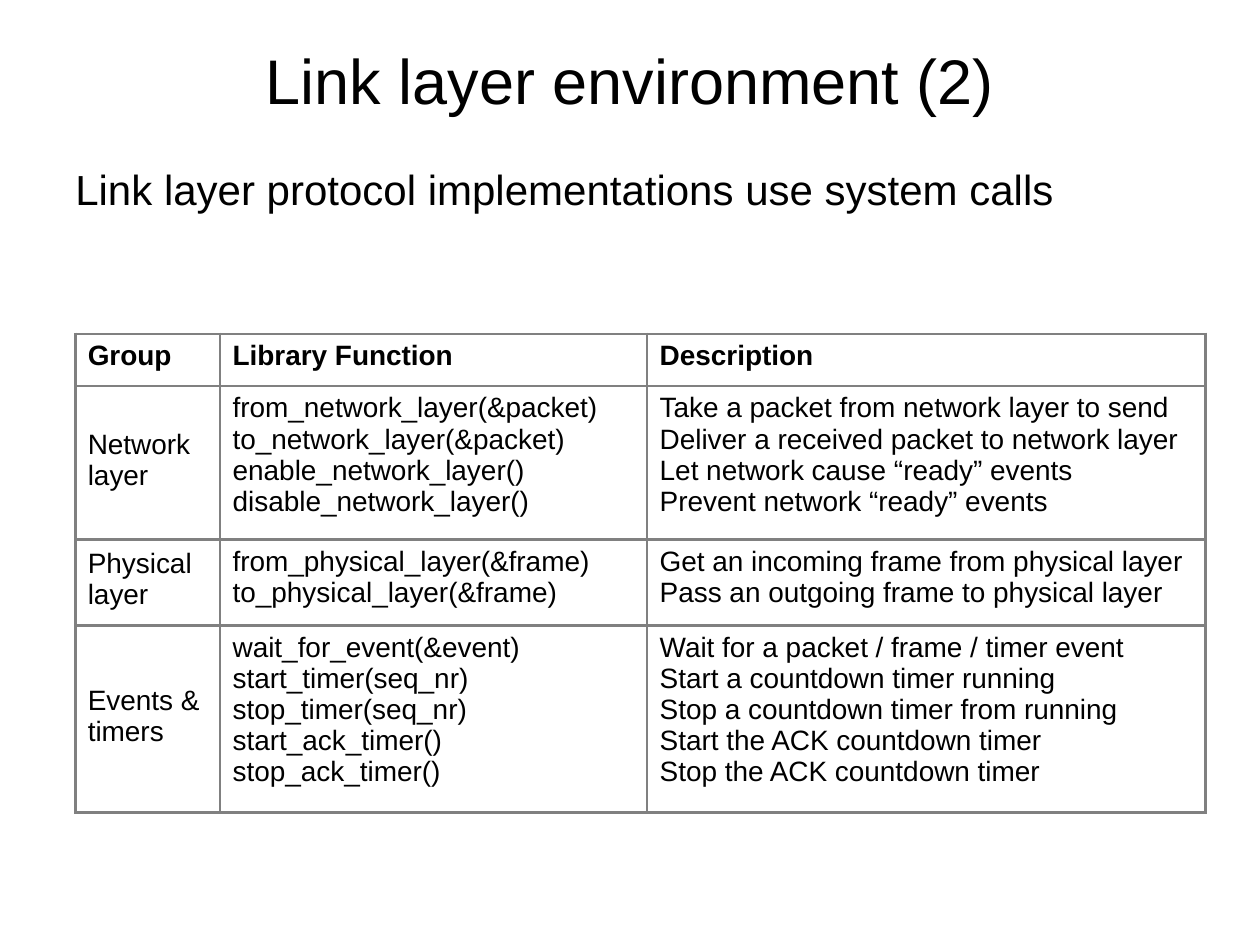
from collections import namedtuple

from lxml import etree
from pptx import Presentation
from pptx.dml.color import RGBColor
from pptx.enum.text import MSO_ANCHOR, PP_ALIGN
from pptx.oxml.ns import qn
from pptx.util import Cm, Pt

Box = namedtuple("Box", "left top width height")

BLACK = RGBColor(0x00, 0x00, 0x00)
GREY = RGBColor(0x80, 0x80, 0x80)
TOP, MIDDLE = MSO_ANCHOR.TOP, MSO_ANCHOR.MIDDLE
LEFT, CENTER = PP_ALIGN.LEFT, PP_ALIGN.CENTER

FONT = {"name": "Arial", "bold": False}
TITLE_FONT = {**FONT, "size": Pt(36)}
BODY_FONT = {**FONT, "size": Pt(24)}
CELL_FONT = {**FONT, "size": Pt(16)}
HEADER_FONT = {**CELL_FONT, "bold": True}
CELL_MARGINS = {
    "margin_left": Cm(0.25),
    "margin_top": Cm(0.13),
    "margin_right": Cm(0.25),
    "margin_bottom": Cm(0.25),
}

COLUMN_SHARES = (1.15, 3.39, 4.43)
ROW_HEIGHTS = (1.03, 2.9, 1.63, 3.53)
HEADERS = ("Group", "Library Function", "Description")
CALL_GROUPS = {
    "Network layer": (
        ("from_network_layer(&packet)", "Take a packet from network layer to send"),
        ("to_network_layer(&packet)", "Deliver a received packet to network layer"),
        ("enable_network_layer()", "Let network cause “ready” events"),
        ("disable_network_layer()", "Prevent network “ready” events"),
    ),
    "Physical layer": (
        ("from_physical_layer(&frame)", "Get an incoming frame from physical layer"),
        ("to_physical_layer(&frame)", "Pass an outgoing frame to physical layer"),
    ),
    "Events & timers": (
        ("wait_for_event(&event)", "Wait for a packet / frame / timer event"),
        ("start_timer(seq_nr)", "Start a countdown timer running"),
        ("stop_timer(seq_nr)", "Stop a countdown timer from running"),
        ("start_ack_timer()", "Start the ACK countdown timer"),
        ("stop_ack_timer()", "Stop the ACK countdown timer"),
    ),
}


def set_values(target, values):
    """Set each named attribute of the target."""
    for name, value in values.items():
        setattr(target, name, value)


def write_lines(frame, lines, font, align=LEFT):
    """Write one paragraph for each line."""
    for index, line in enumerate(lines):
        para = frame.paragraphs[0] if index == 0 else frame.add_paragraph()
        para.alignment = align
        span = para.add_run()
        span.text = line
        set_values(span.font, font)
        span.font.color.rgb = BLACK


def add_text(page, box, line, font, anchor=TOP, align=LEFT):
    """Place a line of text in the box."""
    frame = page.shapes.add_textbox(*map(Cm, box)).text_frame
    set_values(frame, {"word_wrap": True, "vertical_anchor": anchor})
    write_lines(frame, [line], font, align)


def add_borders(cell, color, width):
    """Draw the four edges of a cell."""
    properties = cell._tc.get_or_add_tcPr()
    for index, side in enumerate(("lnL", "lnR", "lnT", "lnB")):
        line = etree.Element(qn(f"a:{side}"), w=str(width))
        fill = etree.SubElement(line, qn("a:solidFill"))
        etree.SubElement(fill, qn("a:srgbClr"), val=str(color))
        properties.insert(index, line)


def fill_cell(cell, lines, font, anchor):
    """Style a cell and write its lines."""
    set_values(cell, {**CELL_MARGINS, "vertical_anchor": anchor})
    cell.fill.background()
    add_borders(cell, GREY, Pt(1.5))
    write_lines(cell.text_frame, lines, font)


def add_call_table(page, box):
    """Place the table of system calls in the box."""
    rows = [[[header] for header in HEADERS]]
    rows += [[[group], *zip(*calls)] for group, calls in CALL_GROUPS.items()]
    table = page.shapes.add_table(len(rows), len(HEADERS), *map(Cm, box)).table
    set_values(table, {"first_row": False, "horz_banding": False})
    for column, share in zip(table.columns, COLUMN_SHARES):
        column.width = Cm(box.width * share / sum(COLUMN_SHARES))
    for row, height in zip(table.rows, ROW_HEIGHTS):
        row.height = Cm(box.height * height / sum(ROW_HEIGHTS))
    for row_index, row in enumerate(rows):
        font = CELL_FONT if row_index else HEADER_FONT
        for column_index, lines in enumerate(row):
            anchor = MIDDLE if row_index and column_index == 0 else TOP
            fill_cell(table.cell(row_index, column_index), lines, font, anchor)


def main():
    """Build the slide and save the deck."""
    deck = Presentation()
    set_values(deck, {"slide_width": Cm(25.4), "slide_height": Cm(19.05)})
    page = deck.slides.add_slide(deck.slide_layouts[6])
    add_text(page, Box(0, 0, 25.4, 3.18), "Link layer environment (2)",
             TITLE_FONT, MIDDLE, CENTER)
    add_text(page, Box(1.27, 3.18, 22.86, 13.51),
             "Link layer protocol implementations use system calls", BODY_FONT)
    add_call_table(page, Box(1.52, 6.73, 22.78, 9.09))
    deck.save("out.pptx")


if __name__ == "__main__":
    main()
